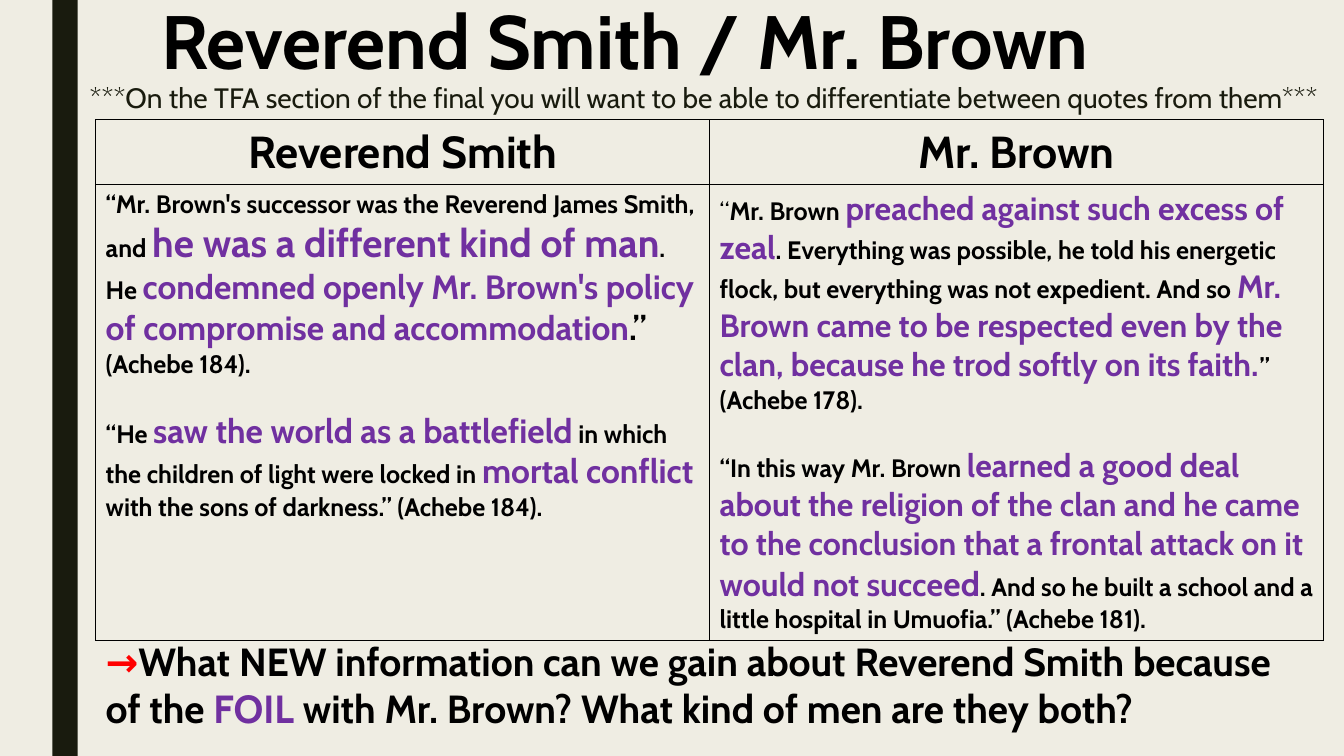
import pptx
import pptx.dml.color
import pptx.enum.shapes
import pptx.enum.text
import pptx.oxml
import pptx.oxml.ns
import pptx.util
from pptx.util import Cm

BLACK, DARK, PURPLE, RED = "000000", "191B0E", "7030A0", "FF0000"


def color(hex_string):
    return pptx.dml.color.RGBColor.from_string(hex_string)


def add_runs(paragraph, runs, bold=True):
    for text, size, hex_string in runs:
        run = paragraph.add_run()
        run.text = text
        run.font.name = "Cabin"
        run.font.size = pptx.util.Pt(size)
        run.font.bold = bold
        run.font.color.rgb = color(hex_string)


presentation = pptx.Presentation()
presentation.slide_width = Cm(33.87)
presentation.slide_height = Cm(19.05)
slide = presentation.slides.add_slide(presentation.slide_layouts[6])

# Background and side bar
slide.background.fill.solid()
slide.background.fill.fore_color.rgb = color("EFEDE3")
bar = slide.shapes.add_shape(
    pptx.enum.shapes.MSO_SHAPE.RECTANGLE, Cm(1.32), 0, Cm(0.64), presentation.slide_height)
bar.shadow.inherit = False
bar.fill.solid()
bar.fill.fore_color.rgb = color(DARK)
bar.line.fill.background()

# Title, subtitle and closing question: left, top, width, height, spacing, bold, runs
text_blocks = [
    (3.81, 0, 26.67, 1.98, 0.89, True, [("Reverend Smith / Mr. Brown", 54, BLACK)]),
    (2.01, 1.98, 31.85, 1.78, 0.94, False, [
        ("***On the TFA section of the final you will want to be able to "
         "differentiate between quotes from them***", 20, DARK)]),
    (2.41, 15.93, 30.94, 2.64, 1.0, True, [
        ("→", 28, RED),
        ("What NEW information can we gain about Reverend Smith because of the ", 28, BLACK),
        ("FOIL", 28, PURPLE),
        (" with Mr. Brown? What kind of men are they both?", 28, BLACK)]),
]
for left, top, width, height, spacing, bold, runs in text_blocks:
    box = slide.shapes.add_textbox(Cm(left), Cm(top), Cm(width), Cm(height))
    box.text_frame.word_wrap = True
    paragraph = box.text_frame.paragraphs[0]
    paragraph.line_spacing = spacing
    add_runs(paragraph, runs, bold)

# Quote table: one heading and two quotes per character
columns = [
    ("Reverend Smith", [
        [("“Mr. Brown's successor was the Reverend James Smith, and ", 18, BLACK),
         ("he was a different kind of man", 28, PURPLE),
         (". He ", 18, BLACK),
         ("condemned openly Mr. Brown's policy of compromise and accommodation", 24, PURPLE),
         (".” ", 24, BLACK),
         ("(Achebe 184).", 18, BLACK)],
        [("“He ", 18, BLACK),
         ("saw the world as a battlefield", 24, PURPLE),
         (" in which the children of light were locked in ", 18, BLACK),
         ("mortal conflict ", 24, PURPLE),
         ("with the sons of darkness.” (Achebe 184).", 18, BLACK)],
    ]),
    ("Mr. Brown", [
        [("“", 18, BLACK),
         ("Mr. Brown ", 18, BLACK),
         ("preached against such excess of zeal", 23, PURPLE),
         (". Everything was possible, he told his energetic flock, but everything "
          "was not expedient. And so ", 18, BLACK),
         ("Mr. Brown came to be respected even by the clan, because he trod softly "
          "on its faith.", 23, PURPLE),
         ("” (Achebe 178).", 18, BLACK)],
        [("“In this way Mr. Brown ", 18, BLACK),
         ("learned a good deal about the religion of the clan and he came to the "
          "conclusion that a frontal attack on it would not succe", 23, PURPLE),
         ("ed", 24, PURPLE),
         (". And so he built a school and a little hospital in Umuofia.” (Achebe 181).",
          18, BLACK)],
    ]),
]
table = slide.shapes.add_table(2, 2, Cm(2.41), Cm(3.02), Cm(30.94), Cm(13.12)).table
table.first_row = False
table.horz_banding = False
table.rows[0].height = Cm(1.62)
table.rows[1].height = Cm(11.5)

for index, (heading, quotes) in enumerate(columns):
    paragraph = table.cell(0, index).text_frame.paragraphs[0]
    paragraph.alignment = pptx.enum.text.PP_ALIGN.CENTER
    add_runs(paragraph, [(heading, 32, BLACK)])

    frame = table.cell(1, index).text_frame
    add_runs(frame.paragraphs[0], quotes[0])
    paragraph = frame.add_paragraph()
    paragraph.space_before = pptx.util.Pt(22)
    add_runs(paragraph, quotes[1])

# The opening quotation mark for Mr. Brown is light
table.cell(1, 1).text_frame.paragraphs[0].runs[0].font.bold = False

# Thin black borders, no cell fill
for cell in table.iter_cells():
    properties = cell._tc.get_or_add_tcPr()
    for side in ("lnL", "lnR", "lnT", "lnB"):
        properties.append(pptx.oxml.parse_xml(
            f'<a:{side} {pptx.oxml.ns.nsdecls("a")} w="12700"><a:solidFill>'
            f'<a:srgbClr val="{BLACK}"/></a:solidFill></a:{side}>'))
    cell.fill.background()

presentation.save("out.pptx")
